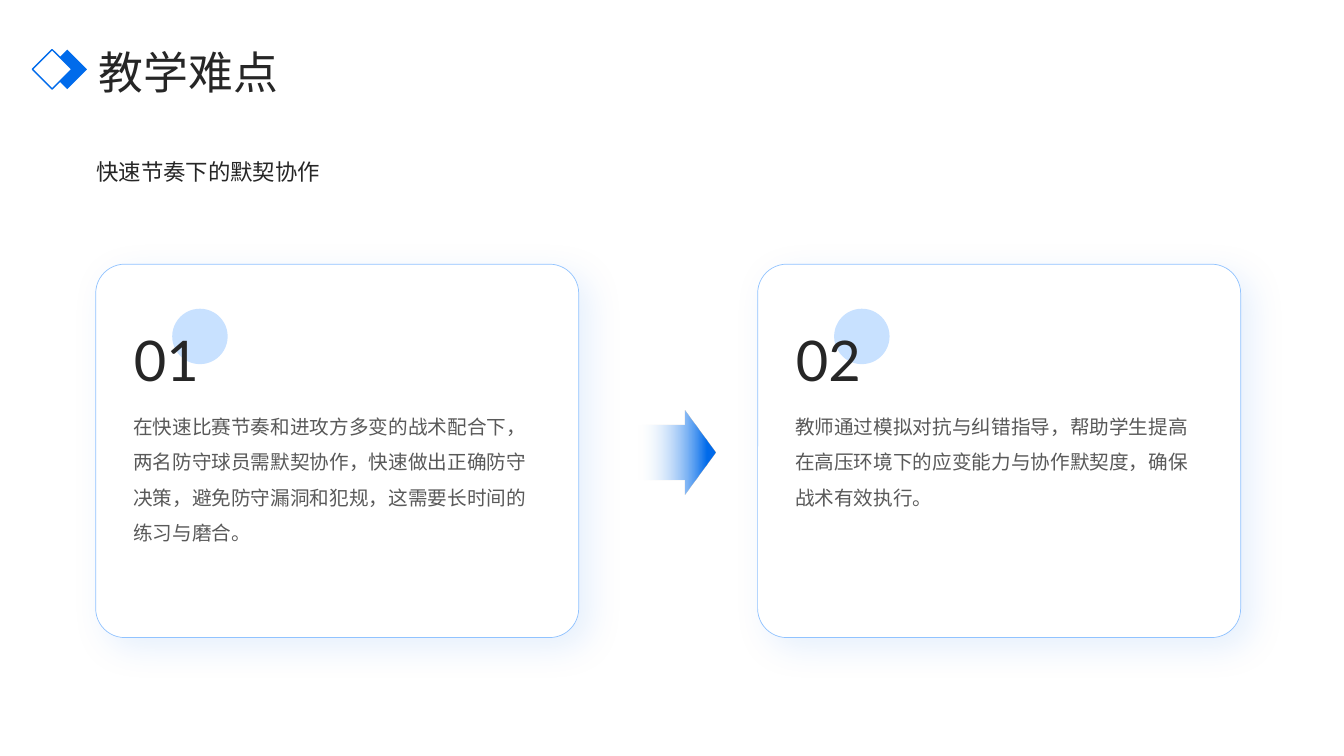
from dataclasses import dataclass

from lxml.etree import SubElement
from pptx import Presentation
from pptx.dml.color import RGBColor
from pptx.enum.shapes import MSO_SHAPE as Kind
from pptx.enum.text import MSO_ANCHOR as Anchor, MSO_AUTO_SIZE as Fit, PP_ALIGN as Align
from pptx.oxml.ns import qn
from pptx.util import Inches, Pt


@dataclass(frozen=True)
class Theme:
    blue: str = "006BEB"
    pale: str = "C8E1FF"
    edge: str = "91C3FF"
    white: str = "FFFFFF"
    ink: str = "262626"
    gray: str = "595959"
    font: str = "Noto Sans CJK SC"
    digit: str = "Lato"
    title: int = 32
    lead: int = 16
    body: int = 14
    number: int = 40


class Deck:
    """Draws on one slide; lengths are cells of a 160 by 90 grid."""

    def __init__(self, theme):
        self.theme = theme
        self.file = Presentation()
        self.file.slide_width, self.file.slide_height = Inches(13.33), Inches(7.5)
        self.col = self.file.slide_width / 160
        self.row = self.file.slide_height / 90
        self.slide = self.file.slides.add_slide(self.file.slide_layouts[1])

    def box(self, x, y, w, h):
        return [round(n) for n in (x * self.col, y * self.row, w * self.col, h * self.row)]

    def shape(self, kind, area, fill=None, line=None, width=1, adjust=()):
        item = self.slide.shapes.add_shape(kind, *self.box(*area))
        item.shadow.inherit = False
        for i, value in enumerate(adjust):
            item.adjustments[i] = value
        if fill:
            item.fill.solid()
            item.fill.fore_color.rgb = RGBColor.from_string(fill)
        if line:
            item.line.color.rgb = RGBColor.from_string(line)
            item.line.width = Pt(width)
        else:
            item.line.fill.background()
        return item

    def glow(self, item):
        """Give the shape a soft blue shadow to the lower right."""
        effects = item._element.spPr.find(qn("a:effectLst"))
        shade = SubElement(effects, qn("a:outerShdw"), blurRad=str(Pt(25)), dist=str(Pt(10)),
                           dir=str(45 * 60000), algn="tl", rotWithShape="0")
        color = SubElement(shade, qn("a:srgbClr"), val=self.theme.blue)
        SubElement(color, qn("a:alpha"), val="10000")

    def label(self, item, text, size, color, font=None, space=1.5, anchor=Anchor.MIDDLE):
        frame = item.text_frame
        frame.word_wrap, frame.auto_size = True, Fit.NONE
        frame.vertical_anchor = anchor
        frame.margin_left = frame.margin_right = frame.margin_top = frame.margin_bottom = 0
        frame.text = text
        para = frame.paragraphs[0]
        para.alignment, para.line_spacing, para.space_before = Align.LEFT, space, Pt(0)
        props = para._p.get_or_add_pPr()
        props.set("marL", "0")
        props.set("indent", "0")
        SubElement(props, qn("a:buNone"))
        para.font.size = Pt(size)
        para.font.color.rgb = RGBColor.from_string(color)
        para.font.name = font or self.theme.font
        SubElement(props.find(qn("a:defRPr")), qn("a:ea"), typeface=self.theme.font)

    def text(self, area, *words, **style):
        self.label(self.slide.shapes.add_textbox(*self.box(*area)), *words, **style)

    def holder(self, index, area, *words, **style):
        """Move and fill one of the layout's placeholders."""
        item = self.slide.placeholders[index]
        item.left, item.top, item.width, item.height = self.box(*area)
        self.label(item, *words, **style)

    def card(self, x, y, number, words):
        look = self.theme
        self.glow(self.shape(Kind.ROUNDED_RECTANGLE, (x, y, 57.5, 44.45),
                             look.white, look.edge, 0.5, [0.078]))
        self.shape(Kind.OVAL, (x + 9.1, y + 5.3, 6.6, 6.6), look.pale)
        self.text((x + 4.55, y + 7.3, 11.3, 7.3), number, look.number, look.ink,
                  font=look.digit, space=1.1)
        self.text((x + 4.45, y + 16.55, 48.8, 25.55), words, look.body, look.gray,
                  anchor=Anchor.TOP)

    def arrow(self, area):
        item = self.shape(Kind.RIGHT_ARROW, area, adjust=(0.648, 0.368))
        item.fill.gradient()
        item.fill.gradient_angle = 0
        stops = item.fill.gradient_stops
        for stop, place, color in zip(stops, (0.1, 0.9), (self.theme.white, self.theme.blue)):
            stop.position = place
            stop.color.rgb = RGBColor.from_string(color)
        clear = next(item._element.iter(qn("a:gs"))).find(qn("a:srgbClr"))
        SubElement(clear, qn("a:alpha"), val="0")

    def mark(self, x, y, size):
        look = self.theme
        self.shape(Kind.DIAMOND, (x + 1.8, y, size, size), look.blue)
        self.shape(Kind.DIAMOND, (x, y, size, size), look.white, look.blue)


CARDS = (
    "在快速比赛节奏和进攻方多变的战术配合下，两名防守球员需默契协作，快速做出正确防守决策，"
    "避免防守漏洞和犯规，这需要长时间的练习与磨合。",
    "教师通过模拟对抗与纠错指导，帮助学生提高在高压环境下的应变能力与协作默契度，确保战术有效执行。",
)


def main():
    look = Theme()
    deck = Deck(look)
    deck.holder(0, (11.75, 5.15, 139.3, 6.1), "教学难点", look.title, look.ink, space=1.1)
    deck.holder(1, (11.5, 17.65, 135.4, 4), "快速节奏下的默契协作", look.lead, look.ink)
    for i, words in enumerate(CARDS):
        deck.card(11.4 + 78.8 * i, 31.45, f"{i + 1:02}", words)
    deck.arrow((74.9, 48.85, 10.3, 10))
    deck.mark(3.85, 5.9, 4.7)
    deck.file.save("out.pptx")


if __name__ == "__main__":
    main()
